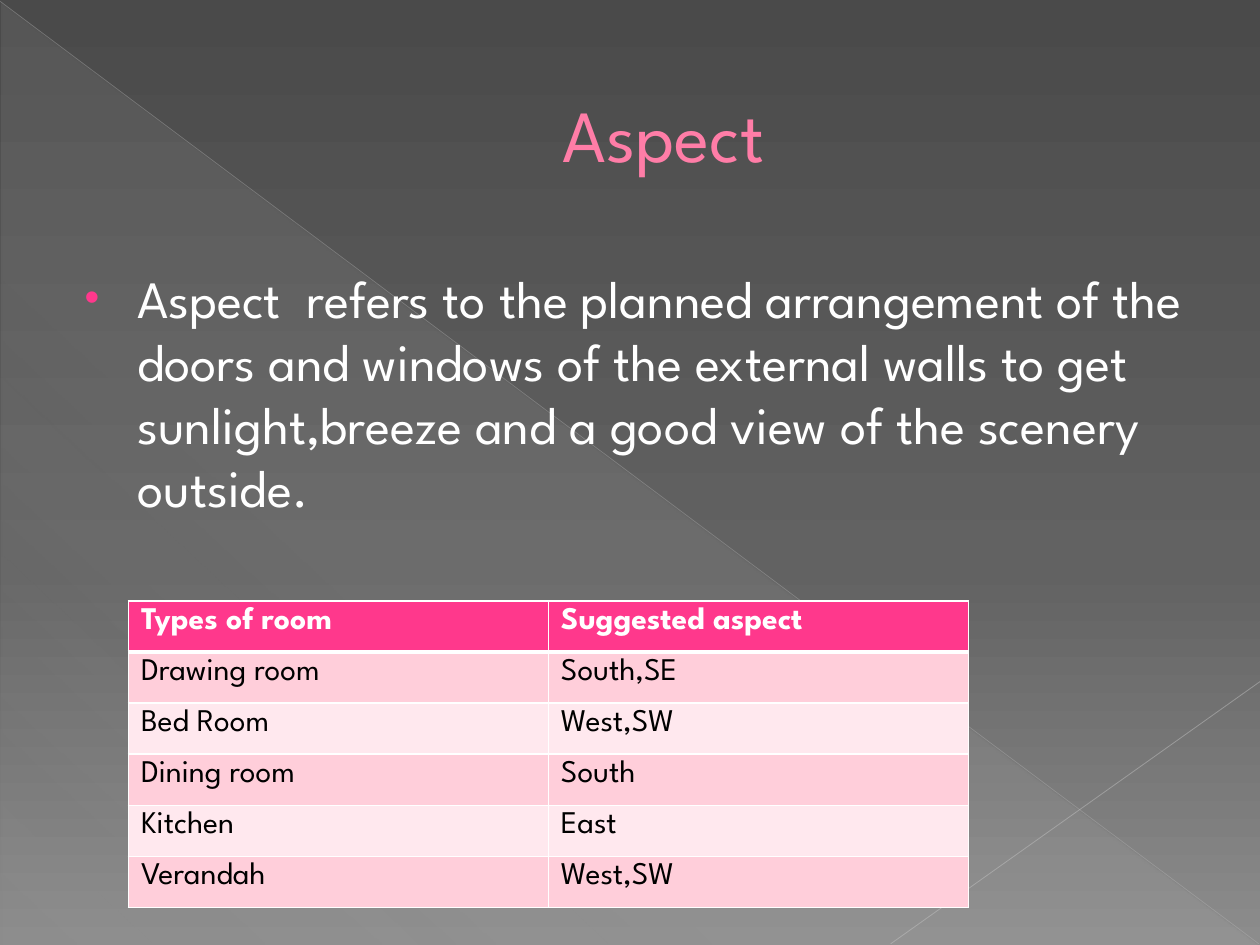
from dataclasses import dataclass

import pptx
import pptx.dml.color
import pptx.enum.shapes
import pptx.enum.text
import pptx.oxml
import pptx.oxml.ns
import pptx.util

Pt = pptx.util.Pt
FONT = "League Spartan"
NS = pptx.oxml.ns.nsdecls("a")
COLORS = {
    "title": "FF7DA7", "title_edge": "B12761", "accent": "FF388C",
    "white": "FFFFFF", "black": "000000",
    "odd_row": "FFCEDA", "even_row": "FFE8EE",
    "glow": "D2D2D2", "long_ray": "BFBFBF", "short_ray": "C6C6C6",
    "sky_top": "4A4A4A", "sky_middle": "626262", "sky_bottom": "8C8C8C",
}


@dataclass
class Stop:
    position: int
    color: str
    opacity: int = 100


@dataclass
class Ray:
    start: tuple[float, float]
    end: tuple[float, float]
    color: str
    width: float
    opacity: int


@dataclass
class RoomAspect:
    room: str
    aspect: str


RAYS = [
    Ray((0, 0.72), (719.3, 539.3), "long_ray", 0.39, 35),
    Ray((720, 389.5), (509, 539.3), "short_ray", 0.47, 45),
]
ROOMS = [
    RoomAspect("Types of room", "Suggested aspect"),
    RoomAspect("Drawing room", "South,SE"),
    RoomAspect("Bed Room", "West,SW"),
    RoomAspect("Dining room", "South"),
    RoomAspect("Kitchen", "East"),
    RoomAspect("Verandah", "West,SW"),
]


def rgb(name: str) -> pptx.dml.color.RGBColor:
    return pptx.dml.color.RGBColor.from_string(COLORS[name])


def color_xml(name: str, opacity: int = 100) -> str:
    return (f'<a:srgbClr val="{COLORS[name]}">'
            f'<a:alpha val="{opacity * 1000}"/></a:srgbClr>')


def line_xml(tag: str, color: str, width: float) -> str:
    return (f'<a:{tag} {NS} w="{int(Pt(width))}"><a:solidFill>'
            f'{color_xml(color)}</a:solidFill></a:{tag}>')


def set_gradient(fill, owner, stops: list[Stop], angle: int) -> None:
    """Replace the default gradient of the owner element."""
    fill.gradient()
    old = owner.xpath(".//a:gradFill")[0]
    stops_xml = "".join(
        f'<a:gs pos="{stop.position * 1000}">{color_xml(stop.color, stop.opacity)}</a:gs>'
        for stop in stops)
    new = pptx.oxml.parse_xml(
        f'<a:gradFill {NS} rotWithShape="1"><a:gsLst>{stops_xml}</a:gsLst>'
        f'<a:lin ang="{angle * 60000}" scaled="0"/></a:gradFill>')
    old.getparent().replace(old, new)


def write_text(frame, text: str, *, size: float, color: str, bold: bool = False,
               align=None, left: float = 0, indent: float = 0,
               before: float = 0, bullet: str = "", edge: str = "") -> None:
    paragraph = frame.paragraphs[0]
    paragraph.alignment = align
    paragraph.space_before = Pt(before)
    properties = paragraph._p.get_or_add_pPr()
    properties.set("marL", str(int(Pt(left))))
    properties.set("indent", str(int(Pt(indent))))
    if bullet:
        for part in (f'<a:buClr {NS}>{color_xml("accent")}</a:buClr>',
                     f'<a:buSzPct {NS} val="80000"/>',
                     f'<a:buFont {NS} typeface="Arial"/>',
                     f'<a:buChar {NS} char="{bullet}"/>'):
            properties.append(pptx.oxml.parse_xml(part))
    run = paragraph.add_run()
    run.text = text
    run.font.name = FONT
    run.font.size = Pt(size)
    run.font.bold = bold
    run.font.color.rgb = rgb(color)
    if edge:
        run.font._element.insert(0, pptx.oxml.parse_xml(line_xml("ln", edge, 0.5)))


def place(shape, left: float, top: float, width: float, height: float) -> None:
    shape.left, shape.top = Pt(left), Pt(top)
    shape.width, shape.height = Pt(width), Pt(height)


def draw_ray(slide, ray: Ray) -> None:
    connector = slide.shapes.add_connector(
        pptx.enum.shapes.MSO_CONNECTOR.STRAIGHT,
        *map(Pt, ray.start), *map(Pt, ray.end))
    connector.line.width = Pt(ray.width)
    connector.line.color.rgb = rgb(ray.color)
    color = connector._element.xpath("./p:spPr/a:ln//a:srgbClr")[0]
    color.append(pptx.oxml.parse_xml(f'<a:alpha {NS} val="{ray.opacity * 1000}"/>'))
    connector._element.spPr.append(pptx.oxml.parse_xml(f"<a:effectLst {NS}/>"))


def draw_cell(cell, text: str, row: int) -> None:
    header = row == 0
    properties = cell._tc.get_or_add_tcPr()
    for side in "LRTB":
        heavy = (header and side == "B") or (row == 1 and side == "T")
        properties.append(pptx.oxml.parse_xml(
            line_xml(f"ln{side}", "white", 3 if heavy else 1)))
    cell.fill.solid()
    cell.fill.fore_color.rgb = rgb(
        "accent" if header else "odd_row" if row % 2 else "even_row")
    write_text(cell.text_frame, text, size=18, bold=header,
               color="white" if header else "black")


def draw_rooms(slide, rooms: list[RoomAspect]) -> None:
    table = slide.shapes.add_table(
        len(rooms), 2, Pt(73.4), Pt(343.4), Pt(480), Pt(29.2 * len(rooms))).table
    for row, entry in enumerate(rooms):
        table.rows[row].height = Pt(29.2)
        for column, text in enumerate((entry.room, entry.aspect)):
            draw_cell(table.cell(row, column), text, row)


def main() -> None:
    deck = pptx.Presentation()
    deck.slide_width, deck.slide_height = Pt(720), Pt(540)
    slide = deck.slides.add_slide(deck.slide_layouts[1])
    title, definition = slide.placeholders

    # Background with a pale triangle and two rays
    set_gradient(slide.background.fill, slide.element,
                 [Stop(0, "sky_top"), Stop(60, "sky_middle"), Stop(100, "sky_bottom")], 90)
    glow = slide.shapes.add_shape(
        pptx.enum.shapes.MSO_SHAPE.RIGHT_TRIANGLE, Pt(0.7), Pt(1.4), Pt(718.6), Pt(538.6))
    glow.shadow.inherit = False
    glow.line.fill.background()
    set_gradient(glow.fill, glow._element.spPr,
                 [Stop(0, "glow", 10), Stop(70, "glow", 8), Stop(100, "glow", 1)], 133)
    for ray in RAYS:
        draw_ray(slide, ray)

    # Title and definition, brought in front of the background
    for placeholder in (title, definition):
        slide.shapes._spTree.append(placeholder._element)
    place(title, 36, 20.9, 648, 110.2)
    title.text_frame.vertical_anchor = pptx.enum.text.MSO_ANCHOR.MIDDLE
    write_text(title.text_frame, "Aspect", size=42, color="title", left=38.2,
               align=pptx.enum.text.PP_ALIGN.CENTER, edge="title_edge")
    place(definition, 36, 148.3, 648, 360)
    write_text(definition.text_frame,
               "Aspect  refers to the planned arrangement of the doors and windows "
               "of the external walls to get sunlight,breeze and a good view of the "
               "scenery outside.",
               size=30, color="white", left=35.3, indent=-30.2, before=6, bullet="•")

    # Suggested aspect of each room
    draw_rooms(slide, ROOMS)
    deck.save("out.pptx")


if __name__ == "__main__":
    main()
